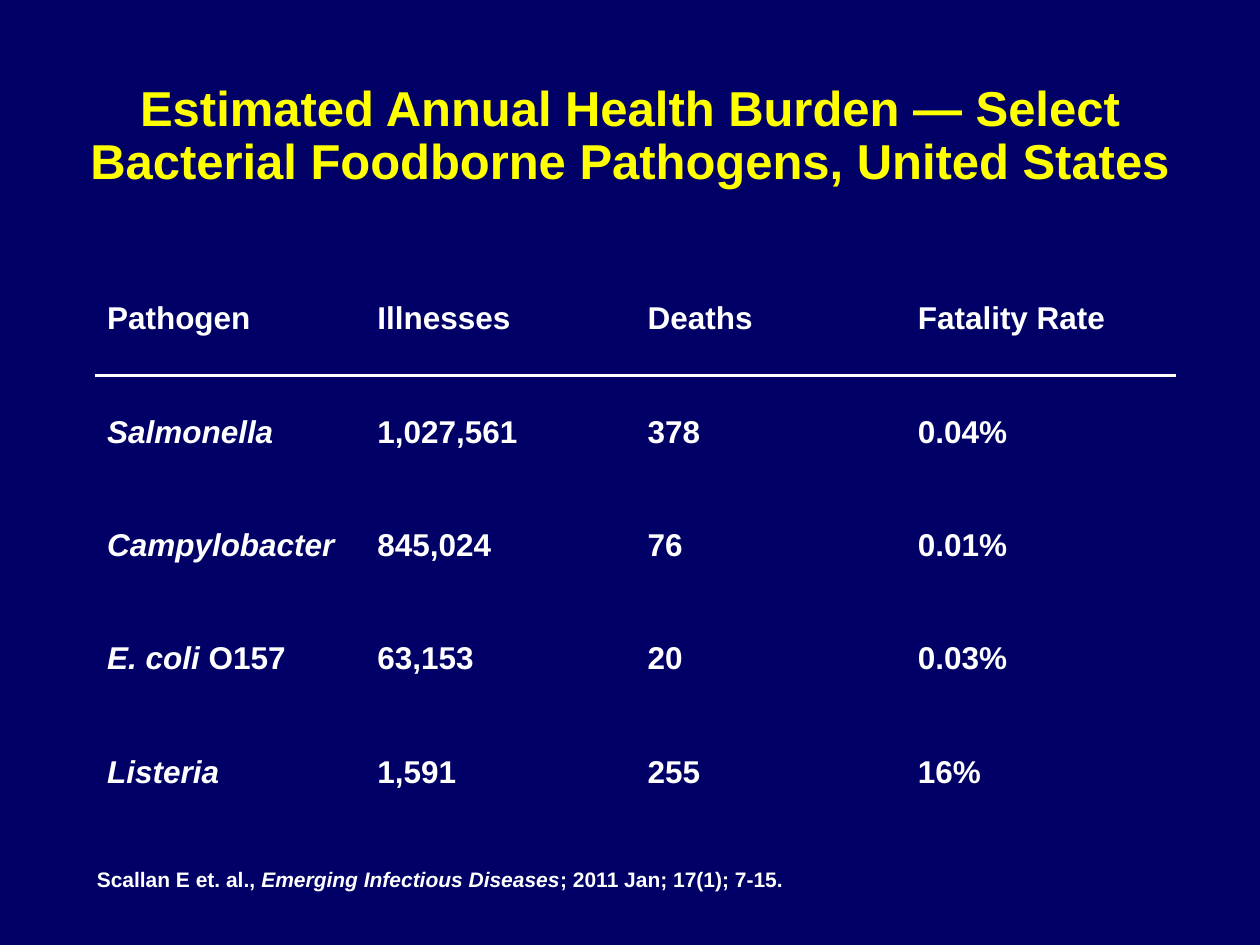
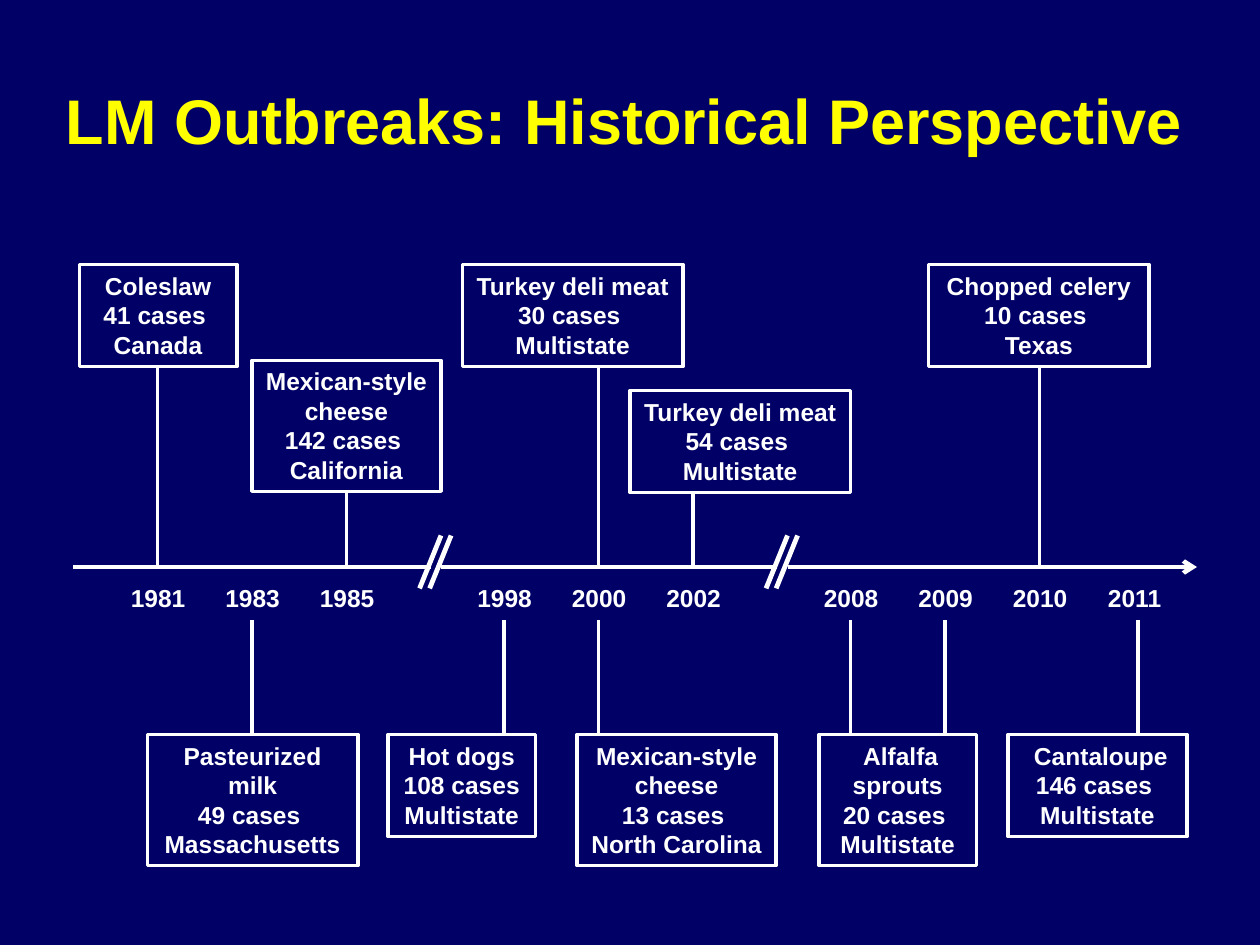
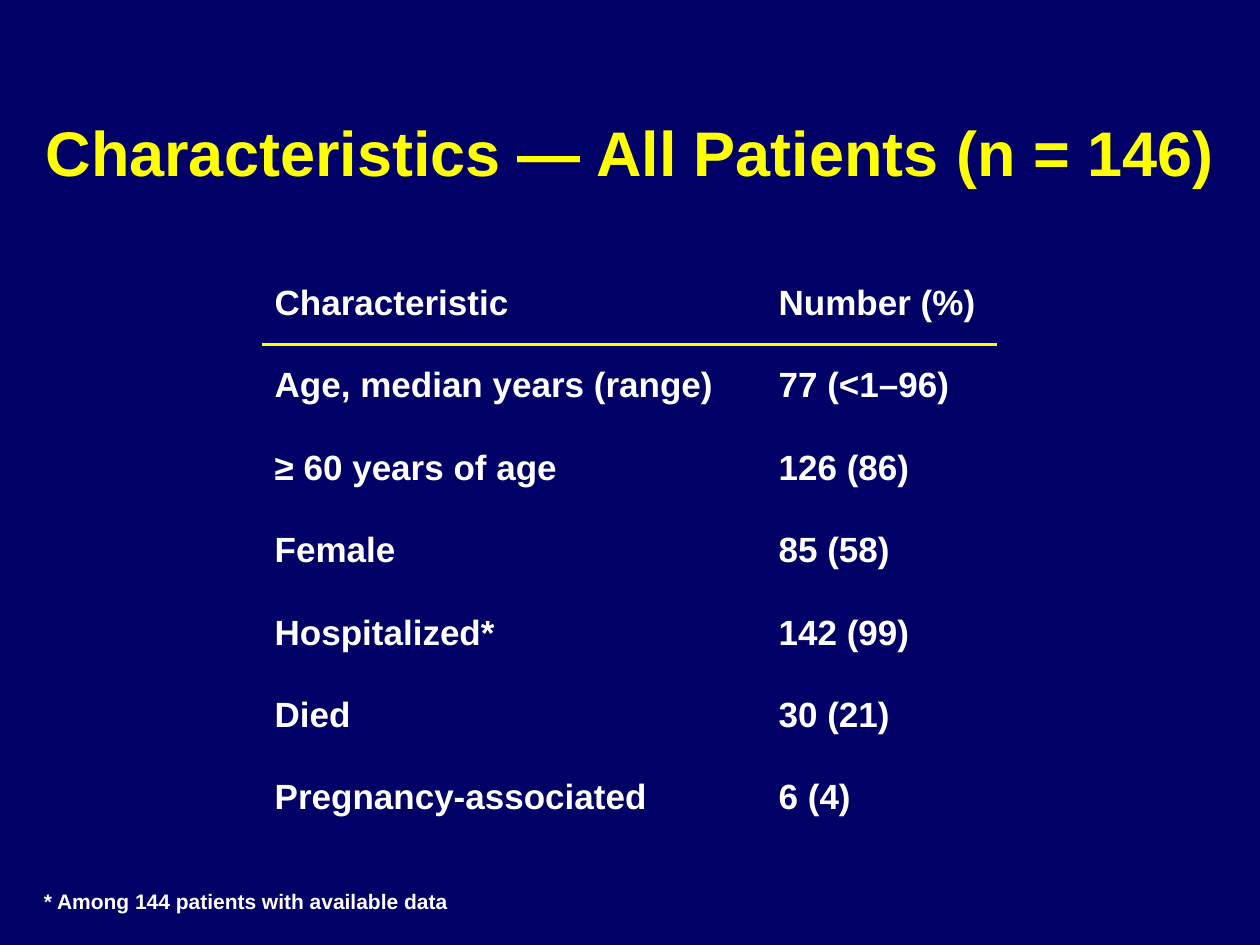
from pptx import Presentation
from pptx.dml.color import RGBColor
from pptx.enum.shapes import MSO_CONNECTOR, MSO_SHAPE
from pptx.enum.text import MSO_ANCHOR, PP_ALIGN
from pptx.oxml.ns import qn
from pptx.util import Inches, Pt
from lxml import etree

NAVY = RGBColor(0x00, 0x00, 0x66)
YELLOW = RGBColor(0xFF, 0xFF, 0x00)
WHITE = RGBColor(0xFF, 0xFF, 0xFF)
FONT = "Arial"
LEFT, CENTER = PP_ALIGN.LEFT, PP_ALIGN.CENTER
TOP, MIDDLE, BOTTOM = MSO_ANCHOR.TOP, MSO_ANCHOR.MIDDLE, MSO_ANCHOR.BOTTOM
STRAIGHT, RECTANGLE = MSO_CONNECTOR.STRAIGHT, MSO_SHAPE.RECTANGLE
NO_STYLE_TABLE = "{2D5ABB26-0587-4C30-8999-92F81FD0307C}"
RULE_WIDTH = 2.25

BURDEN_ROWS = [
    ["Pathogen", "Illnesses", "Deaths", "Fatality Rate"],
    ["_Salmonella_", "1,027,561", "378", "0.04%"],
    ["_Campylobacter_", "845,024", "76", "0.01%"],
    ["_E. coli _O157", "63,153", "20", "0.03%"],
    ["_Listeria_", "1,591", "255", "16%"],
]
PATIENT_ROWS = [
    ["Characteristic", "Number (%)"],
    ["Age, median years (range)", "77 (<1–96)"],
    ["≥ 60 years of age", "126 (86)"],
    ["Female", "85 (58)"],
    ["Hospitalized*", "142 (99)"],
    ["Died", "30 (21)"],
    ["Pregnancy-associated", "6 (4)"],
]

YEAR_GROUPS = [
    ["1981", "1983", "1985"],
    ["1998", "2000", "2002"],
    ["2008", "2009", "2010", "2011"],
]
FIRST_YEAR, YEAR_STEP, GROUP_STEP = 0.67, 0.75, 2.75
YEAR_CENTERS = [
    (year, FIRST_YEAR + group * GROUP_STEP + position * YEAR_STEP)
    for group, years in enumerate(YEAR_GROUPS)
    for position, year in enumerate(years)
]
AXIS, YEARS_TOP, YEARS_BOTTOM, LOWER_ROW = 2.4, 2.48, 2.82, 3.73
AXIS_WIDTH, STEM_WIDTH = 2.75, 2
AXIS_SEGMENTS = [(0, 2.84), (2.92, 5.59)]
THREE_LINES, FOUR_LINES = 0.81, 1.04
OUTBREAKS = [
    ([0.67], 0.05, 0, 1.25, THREE_LINES, ["Coleslaw", "41 cases ", "Canada"]),
    ([1.42], 0.59, LOWER_ROW, 1.67, FOUR_LINES, ["Pasteurized milk", "49 cases ", "Massachusetts"]),
    ([2.17], 1.42, 0.76, 1.5, FOUR_LINES, ["Mexican-style cheese", "142 cases ", "California"]),
    ([3.42], 2.5, LOWER_ROW, 1.17, THREE_LINES, ["Hot dogs", "108 cases ", "Multistate"]),
    ([4.17], 3.09, 0, 1.75, THREE_LINES, ["Turkey deli meat", "30 cases ", "Multistate"]),
    ([4.92], 4.42, 1, 1.75, THREE_LINES, ["Turkey deli meat", "54 cases ", "Multistate"]),
    ([4.17], 4, LOWER_ROW, 1.58, FOUR_LINES, ["Mexican-style cheese", "13 cases ", "North Carolina"]),
    ([6.17, 6.92], 5.92, LOWER_ROW, 1.25, FOUR_LINES, [" Alfalfa sprouts", "20 cases ", "Multistate"]),
    ([7.67], 6.79, 0, 1.75, THREE_LINES, ["Chopped celery 10 cases ", "Texas"]),
    ([8.45], 7.42, LOWER_ROW, 1.42, THREE_LINES, [" Cantaloupe", "146 cases ", "Multistate"]),
]


def write_text(text_frame, lines, size, color=WHITE, **paragraph_format):
    for index, line in enumerate(lines):
        paragraph = text_frame.add_paragraph() if index else text_frame.paragraphs[0]
        for name, value in paragraph_format.items():
            setattr(paragraph, name, value)
        for part, text in enumerate(line.split("_")):
            if text:
                run = paragraph.add_run()
                run.text = text
                run.font.color.rgb = color
                font_format = {"name": FONT, "size": Pt(size), "bold": True, "italic": part % 2 == 1}
                for name, value in font_format.items():
                    setattr(run.font, name, value)


def add_text(slide, box, lines, size, anchor=TOP, **text_format):
    shape = slide.shapes.add_textbox(*map(Inches, box))
    shape.text_frame.word_wrap = True
    shape.text_frame.vertical_anchor = anchor
    write_text(shape.text_frame, lines, size, **text_format)


def add_title(slide, box, title, size):
    add_text(slide, box, [title], size, BOTTOM, color=YELLOW, alignment=CENTER, line_spacing=Pt(30))


def add_footnote(slide, box, note):
    add_text(slide, box, [note], 12, alignment=LEFT)


def add_line(slide, start, end, width, arrow=False):
    connector = slide.shapes.add_connector(STRAIGHT, *map(Inches, (*start, *end)))
    connector.line.color.rgb = WHITE
    connector.line.width = Pt(width)
    properties = connector._element.spPr
    if arrow:
        etree.SubElement(properties.find(qn("a:ln")), qn("a:tailEnd"), type="arrow")
    etree.SubElement(properties, qn("a:effectLst"))


def set_borders(cell, ruled_side, color):
    properties = cell._tc.get_or_add_tcPr()
    for side in "LRTB":
        border = etree.SubElement(properties, qn(f"a:ln{side}"))
        if side == ruled_side:
            border.set("w", str(Pt(RULE_WIDTH)))
            fill = etree.SubElement(border, qn("a:solidFill"))
            etree.SubElement(fill, qn("a:srgbClr"), val=str(color))
        else:
            etree.SubElement(border, qn("a:noFill"))


def add_ruled_table(slide, box, rows, column_widths, size, rule_color):
    frame = slide.shapes.add_table(len(rows), len(column_widths), *map(Inches, box))
    table = frame.table
    table.first_row = table.horz_banding = False
    table._tbl.tblPr.find(qn("a:tableStyleId")).text = NO_STYLE_TABLE
    for column, width in zip(table.columns, column_widths):
        column.width = Inches(width)
    ruled_sides = {0: "B", 1: "T"}
    for row_index, row in enumerate(rows):
        for column_index, text in enumerate(row):
            cell = table.cell(row_index, column_index)
            set_borders(cell, ruled_sides.get(row_index), rule_color)
            cell.fill.background()
            cell.vertical_anchor = MIDDLE
            write_text(cell.text_frame, [text], size, alignment=LEFT)


def add_outbreak_box(slide, box, lines):
    shape = slide.shapes.add_shape(RECTANGLE, *map(Inches, box))
    shape.shadow.inherit = False
    shape.fill.background()
    shape.line.color.rgb = WHITE
    shape.line.width = Pt(STEM_WIDTH)
    shape.text_frame.word_wrap = True
    shape.text_frame.vertical_anchor = TOP
    write_text(shape.text_frame, lines, 14, alignment=CENTER)


def add_timeline(slide, left, top, width):
    def place(x, y):
        return left + x, top + y

    for start, end in AXIS_SEGMENTS:
        add_line(slide, place(start, AXIS), place(end, AXIS), AXIS_WIDTH)
    add_line(slide, place(5.67, AXIS), place(width, AXIS), 2.5, arrow=True)
    for group in range(2):
        for stroke in range(2):
            x = 2.75 + group * GROUP_STEP + stroke * 0.08
            add_line(slide, place(x + 0.17, AXIS - 0.25), place(x, AXIS + 0.17), AXIS_WIDTH)

    for year, center in YEAR_CENTERS:
        add_text(slide, (*place(center - 0.33, YEARS_TOP), 0.67, 0.34), [year], 14, alignment=CENTER)

    for stems, box_left, box_top, box_width, box_height, lines in OUTBREAKS:
        if box_top == LOWER_ROW:
            stem_start, stem_end = box_top, YEARS_BOTTOM
        else:
            stem_start, stem_end = AXIS, box_top + box_height
        for x in stems:
            add_line(slide, place(x, stem_start), place(x, stem_end), STEM_WIDTH)
        add_outbreak_box(slide, (*place(box_left, box_top), box_width, box_height), lines)


def add_slide(presentation):
    slide = presentation.slides.add_slide(presentation.slide_layouts[6])
    slide.background.fill.solid()
    slide.background.fill.fore_color.rgb = NAVY
    return slide


def build_burden_slide(presentation):
    slide = add_slide(presentation)
    title = "Estimated Annual Health Burden — Select Bacterial Foodborne Pathogens, United States"
    add_title(slide, (0.5, 0.3, 9, 1.25), title, 28)
    add_ruled_table(slide, (0.75, 2.08, 8.58, 4.5), BURDEN_ROWS, [8.58 / 4] * 4, 18, WHITE)
    note = "Scallan E et. al., _Emerging Infectious Diseases_; 2011 Jan; 17(1); 7-15."
    add_footnote(slide, (0.67, 6.83, 6.5, 0.3), note)


def build_outbreak_slide(presentation):
    slide = add_slide(presentation)
    add_title(slide, (0.08, 0, 9.75, 1.3), "LM Outbreaks: Historical Perspective", 36)
    add_timeline(slide, 0.58, 2.1, 8.92)


def build_patient_slide(presentation):
    slide = add_slide(presentation)
    add_title(slide, (0.25, 0.25, 9.5, 1.3), "Characteristics — All Patients (n = 146)", 36)
    add_ruled_table(slide, (2.08, 2.08, 5.83, 4.58), PATIENT_ROWS, [4, 1.83], 20, YELLOW)
    add_footnote(slide, (0.25, 7, 5.67, 0.3), "* Among 144 patients with available data")


def main():
    presentation = Presentation()
    presentation.slide_width = Inches(10)
    presentation.slide_height = Inches(7.5)
    build_burden_slide(presentation)
    build_outbreak_slide(presentation)
    build_patient_slide(presentation)
    presentation.save("out.pptx")


if __name__ == "__main__":
    main()
